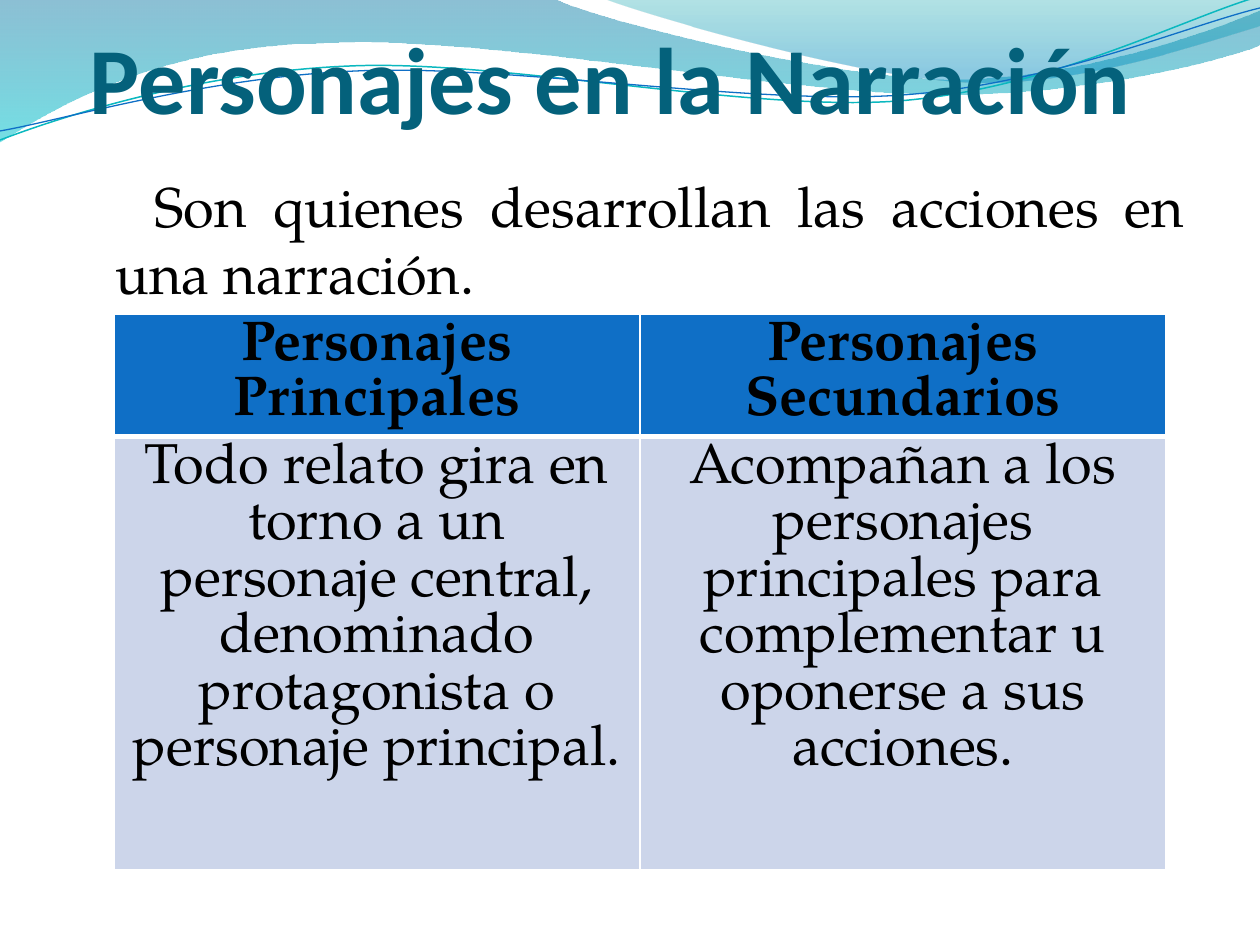
"""Build a slide on the characters of a narration, with a wave header and a table."""
import lxml.etree
import pptx
import pptx.dml.color
import pptx.enum.text
import pptx.oxml.ns
import pptx.util

SCALE = 914400 / 126
COLORS = {
    "title": "04617B", "text": "000000", "header": "0F6FC6", "cell": "CCD5EA",
    "border": "FFFFFF", "teal": "0AB8BF", "blue": "0F6FC6",
}
SERIF = "TeX Gyre Pagella"
qn = pptx.oxml.ns.qn
rgb = pptx.dml.color.RGBColor.from_string
ALIGN = pptx.enum.text.PP_ALIGN


def px(value):
    return pptx.util.Emu(round(value * SCALE))


def write(para, text, font, size, color, bold, align):
    para.alignment = align
    span = para.add_run()
    span.text = text
    span.font.name = font
    span.font.size = pptx.util.Pt(size)
    span.font.bold = bold
    span.font.color.rgb = rgb(color)


deck = pptx.Presentation()
deck.slide_width, deck.slide_height = px(1260), px(945)
page = deck.slides.add_slide(deck.slide_layouts[1])

waves = [
    {"start": (0, 0), "steps": [
        (554, -1), (600, 21, 837, 79, 955, 79), (1075, 79, 1207, 33, 1260, 11),
        (1261, 45), (1239, 55, 1096, 96, 940, 94), (784, 94, 481, 35, 324, 43),
        (163, 45, 58, 105, -1, 142)],
     "stops": [(0, "0074A1", 45), (1, "00C6CF", 55)]},
    {"start": (604, -1), "steps": [
        (641, 14, 859, 78, 969, 82), (1079, 87, 1211, 40, 1260, 26), (1260, 0)],
     "stops": [(0, "00A1A9", 30), (0.8, "008BBF", 45)]},
    {"start": (0, 140), "steps": [
        (60, 117, 199, 72, 349, 66), (498, 59, 747, 112, 898, 101),
        (1050, 89, 1182, 19, 1257, -3)],
     "line": ("teal", 0.85)},
    {"start": (0, 131), "steps": [
        (59, 121, 207, 77, 357, 71), (508, 64, 752, 106, 903, 95),
        (1053, 84, 1186, 26, 1260, 8)],
     "line": ("blue", 0.75)},
]
for wave in waves:
    builder = page.shapes.build_freeform(*map(px, wave["start"]))
    for step in wave["steps"]:
        corners = [(px(x), px(y)) for x, y in zip(step[::2], step[1::2])]
        builder.add_line_segments(corners, close=False)
    if "stops" in wave:
        builder.add_line_segments([], close=True)
    shape = builder.convert_to_shape()
    shape.shadow.inherit = False
    segments = iter(list(shape.element.iter(qn("a:lnTo"))))
    for step in wave["steps"]:
        first = next(segments)
        if len(step) == 6:
            first.tag = qn("a:cubicBezTo")
            for _ in range(2):
                extra = next(segments)
                first.append(extra[0])
                extra.getparent().remove(extra)
    if "line" in wave:
        color, width = wave["line"]
        shape.fill.background()
        shape.line.color.rgb = rgb(COLORS[color])
        shape.line.width = pptx.util.Pt(width)
        continue
    shape.line.fill.background()
    shape.fill.gradient()
    shape.fill.gradient_angle = 270
    for stop, (position, color, _) in zip(shape.fill.gradient_stops, wave["stops"]):
        stop.position = position
        stop.color.rgb = rgb(color)
    for element, (_, _, opacity) in zip(shape.element.iter(qn("a:srgbClr")), wave["stops"]):
        lxml.etree.SubElement(element, qn("a:alpha"), val=str(opacity * 1000))

body = page.placeholders[1]
body.left, body.top, body.width, body.height = px(65), px(165), px(1133), px(89)
body.text_frame.auto_size = pptx.enum.text.MSO_AUTO_SIZE.NONE
para = body.text_frame.paragraphs[0]
write(para, "Son quienes desarrollan las acciones en una narración.",
      SERIF, 32, COLORS["text"], False, ALIGN.JUSTIFY)
properties = para._p.get_or_add_pPr()
properties.set("marL", str(px(38)))
properties.set("indent", str(px(39)))
lxml.etree.SubElement(properties, qn("a:buNone"))

rows = [
    ["Personajes Principales", "Personajes Secundarios"],
    ["Todo relato gira en torno a un personaje central, denominado protagonista "
     "o personaje principal.",
     "Acompañan a los personajes principales para complementar u oponerse a sus acciones."],
]
table = page.shapes.add_table(2, 2, px(114), px(314), px(1052), px(555)).table
for row, height in zip(table.rows, (121, 434)):
    row.height = px(height)
for row_index, texts in enumerate(rows):
    is_header = row_index == 0
    for column_index, text in enumerate(texts):
        cell = table.cell(row_index, column_index)
        para = cell.text_frame.paragraphs[0]
        write(para, text, SERIF, 32, COLORS["text"], is_header, ALIGN.CENTER)
        cell_properties = cell._tc.get_or_add_tcPr()
        for side in "LRTB":
            thick = (is_header and side == "B") or (not is_header and side == "T")
            width = pptx.util.Pt(3 if thick else 1)
            border = lxml.etree.SubElement(cell_properties, qn("a:ln" + side), w=str(width))
            fill = lxml.etree.SubElement(border, qn("a:solidFill"))
            lxml.etree.SubElement(fill, qn("a:srgbClr"), val=COLORS["border"])
        cell.fill.solid()
        cell.fill.fore_color.rgb = rgb(COLORS["header" if is_header else "cell"])

title = page.shapes.title
title.left, title.top, title.width, title.height = px(54), px(35), px(1134), px(98)
frame = title.text_frame
frame.auto_size = pptx.enum.text.MSO_AUTO_SIZE.NONE
frame.vertical_anchor = pptx.enum.text.MSO_ANCHOR.BOTTOM
frame.margin_left = frame.margin_right = frame.margin_bottom = 0
frame.margin_top = px(6)
write(frame.paragraphs[0], "Personajes en la Narración ", "Calibri", 54,
      COLORS["title"], True, ALIGN.CENTER)
page.shapes._spTree.append(title.element)

deck.save("out.pptx")
